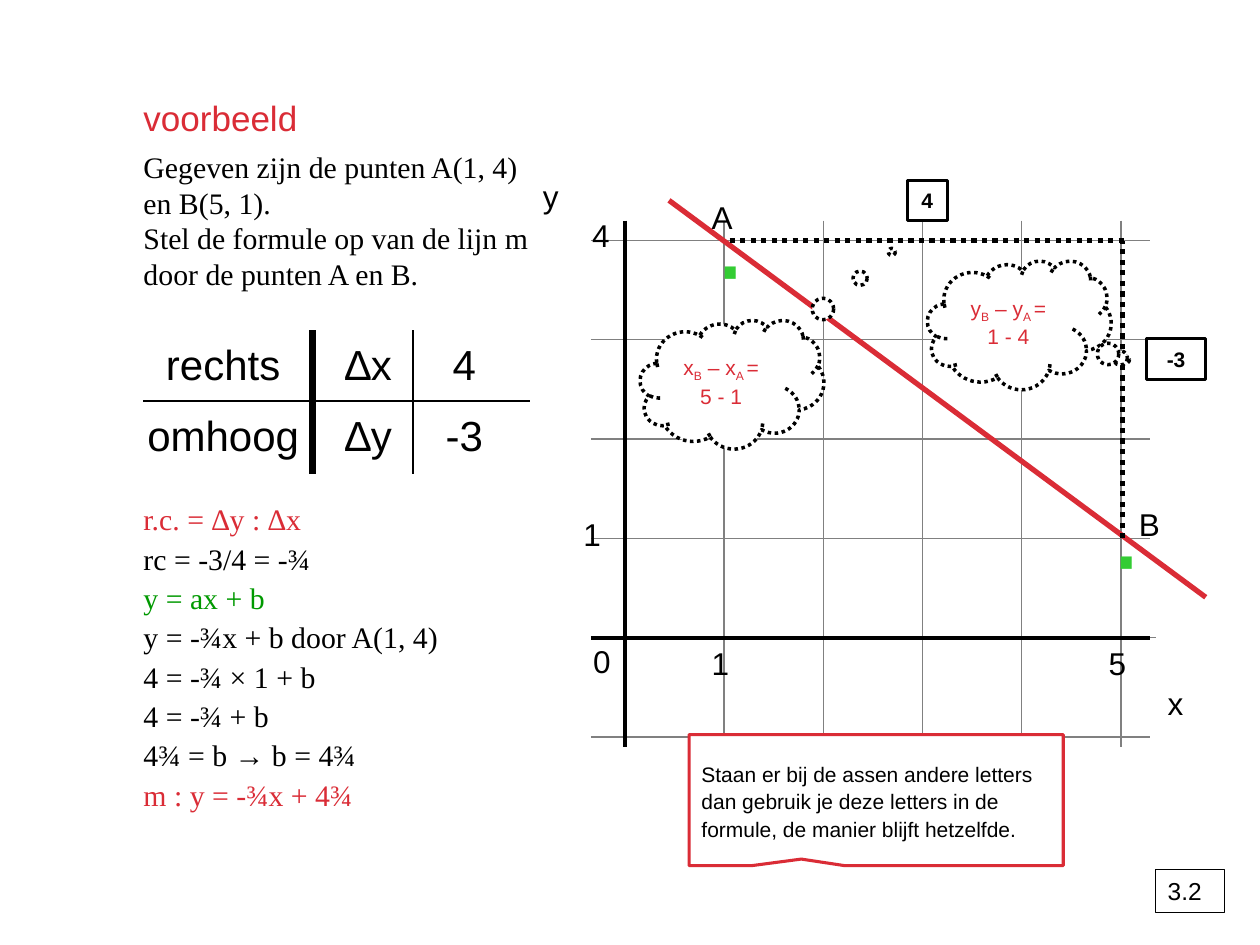
from lxml import etree
from pptx import Presentation
from pptx.dml.color import RGBColor
from pptx.enum.dml import MSO_LINE
from pptx.enum.shapes import MSO_CONNECTOR, MSO_SHAPE
from pptx.enum.text import MSO_ANCHOR, PP_ALIGN
from pptx.oxml.ns import qn
from pptx.util import Pt

BLACK = RGBColor(0x00, 0x00, 0x00)
WHITE = RGBColor(0xFF, 0xFF, 0xFF)
GREY = RGBColor(0x80, 0x80, 0x80)
RED = RGBColor(0xDA, 0x2C, 0x36)
GREEN = RGBColor(0x00, 0x99, 0x00)
LIME = RGBColor(0x33, 0xCC, 0x33)

SANS = "Arial"
SERIF = "Times New Roman"
STRAIGHT = MSO_CONNECTOR.STRAIGHT
DOTS = MSO_LINE.ROUND_DOT
RECT = MSO_SHAPE.RECTANGLE
CLOUD = MSO_SHAPE.CLOUD_CALLOUT
WEDGE = MSO_SHAPE.RECTANGULAR_CALLOUT
LEFT, CENTER = PP_ALIGN.LEFT, PP_ALIGN.CENTER
TOP, MIDDLE = MSO_ANCHOR.TOP, MSO_ANCHOR.MIDDLE

# Grid of the graph: origin and one unit
X0, Y0, UNIT = 357, 364.4, 56.73


def grid_x(value):
    return X0 + value * UNIT


def grid_y(value):
    return Y0 - value * UNIT


def style(part, size, color, font=SANS, bold=False):
    for run in part.runs:
        run.font.size = Pt(size)
        run.font.name = font
        run.font.bold = bold
        run.font.color.rgb = color


def set_frame(frame, anchor, inset=None):
    frame.word_wrap = True
    frame.vertical_anchor = anchor
    if inset is not None:
        frame.margin_left = frame.margin_right = Pt(inset)
        frame.margin_top = frame.margin_bottom = Pt(inset)


def add_text(slide, box, text, size, color=BLACK, font=SANS, align=LEFT,
             anchor=TOP, inset=None, spacing=1.0):
    frame = slide.shapes.add_textbox(*map(Pt, box)).text_frame
    set_frame(frame, anchor, inset)
    frame.text = text
    for part in frame.paragraphs:
        part.alignment = align
        part.line_spacing = spacing
        style(part, size, color, font)
    return frame


def add_line(slide, start, end, color, width, dash=None):
    line = slide.shapes.add_connector(STRAIGHT, *map(Pt, start + end))
    line.line.color.rgb = color
    line.line.width = Pt(width)
    if dash:
        line.line.dash_style = dash
    etree.SubElement(line._element.spPr, qn("a:effectLst"))


def add_box(slide, kind, box, color, width, fill=WHITE, dash=None, tip=()):
    shape = slide.shapes.add_shape(kind, *map(Pt, box))
    shape.shadow.inherit = False
    if fill is None:
        shape.fill.background()
    else:
        shape.fill.solid()
        shape.fill.fore_color.rgb = fill
    shape.line.color.rgb = color
    shape.line.width = Pt(width)
    if dash:
        shape.line.dash_style = dash
    for index, value in enumerate(tip):
        shape.adjustments[index] = value
    set_frame(shape.text_frame, MIDDLE)
    return shape.text_frame


def add_label(slide, box, text, size, width, bold, align, fill=WHITE):
    frame = add_box(slide, RECT, box, BLACK, width, fill)
    frame.text = text
    frame.paragraphs[0].alignment = align
    style(frame.paragraphs[0], size, BLACK, bold=bold)
    return frame


def add_cloud(slide, left, top, tip, name, values):
    frame = add_box(slide, CLOUD, (left, top, 105, 73.5), BLACK, 2,
                    dash=DOTS, tip=tip)
    frame.margin_right = Pt(12)
    frame.text = "\n" + values
    first, second = frame.paragraphs
    for text, low in ((name, False), ("B", True), (f" – {name}", False),
                      ("A ", True), ("=", False)):
        run = first.add_run()
        run.text = text
        if low:
            run.font._element.set("baseline", "-25000")
    for part in (first, second):
        part.alignment = CENTER
        style(part, 12, RED)


def draw_graph(slide):
    # Grid and axes
    left, right, top, bottom = 337.7, 657.4, 126, 427
    for step in range(1, 6):
        add_line(slide, (grid_x(step), top), (grid_x(step), bottom), GREY, 0.75)
    for step in (-1, 1, 2, 3, 4):
        add_line(slide, (left, grid_y(step)), (right, grid_y(step)), GREY, 0.75)
    add_line(slide, (left, Y0), (right + 3, Y0), GREY, 0.75)
    add_line(slide, (left, Y0), (right, Y0), BLACK, 2.25)
    add_line(slide, (X0, top), (X0, bottom), BLACK, 2.25)

    # Point marks, line m and its dotted steps
    for left, top in ((399.6, 104.4), (625.7, 270)):
        add_text(slide, (left, top, 28, 86.4), "·", 66, LIME)
    add_line(slide, (382.3, 114.5), (689, 341.3), RED, 3)
    add_line(slide, (416.9, grid_y(4)), (643.7, grid_y(4)), BLACK, 3, DOTS)
    add_line(slide, (641.5, grid_y(1)), (641.5, grid_y(4)), BLACK, 3, DOTS)

    # Names of axes, points and values
    for text, left, top in (("4", 331.2, 120.2), ("0", 331.9, 363.6),
                            ("1", 326.2, 290.9), ("1", 399.6, 364.3),
                            ("5", 626.4, 364.3), ("A", 399.6, 109.4),
                            ("B", 643.7, 285.1), ("x", 660.2, 387.4),
                            ("y", 303.1, 97.9)):
        add_text(slide, (left, top, 39.6, 28.8), text, 18)

    # Step sizes
    add_label(slide, (518.4, 103, 23, 23), "4", 12, 1.75, True, CENTER)
    add_label(slide, (655.2, 193.7, 33.8, 23), "-3", 12, 1.75, True, CENTER)
    add_cloud(slide, 530, 149, (0.58, 0.27), "y", "1 - 4")
    add_cloud(slide, 365.8, 182.9, (0.87, -1.03), "x", "5 - 1")


def draw_table(slide):
    columns = ((70.6, 113.8), (179.3, 62.6), (236.2, 58.3))
    rows = (("rechts", "∆x", "4"), ("omhoog", "∆y", "-3"))
    for row, words in enumerate(rows):
        for (left, width), word in zip(columns, words):
            box = (left, 190 + row * 40.3, width, 41)
            add_text(slide, box, word, 24, align=CENTER)
    add_line(slide, (82, 229), (303.1, 229), BLACK, 1)
    add_line(slide, (178.6, 188.6), (178.6, 270.7), BLACK, 4.5)
    add_line(slide, (236.2, 188.6), (236.2, 270.7), BLACK, 1)


def draw_text(slide):
    # Heading and task
    add_text(slide, (82, 43.2, 720, 45.4), "voorbeeld", 20, RED,
             anchor=MIDDLE, inset=0, spacing=1.1)
    task = ("Gegeven zijn de punten A(1, 4) en B(5, 1).\v"
            "Stel de formule op van de lijn m door de punten A en B.")
    add_text(slide, (82, 85, 227.5, 81.4), task, 17, font=SERIF, inset=0)

    # Worked solution
    steps = (("r.c. = ∆y : ∆x", RED), ("rc = -3/4 = -¾", BLACK),
             ("y = ax + b", GREEN), ("y = -¾x + b door A(1, 4)", BLACK),
             ("4 = -¾ × 1 + b", BLACK), ("4 = -¾ + b", BLACK),
             ("4¾ = b → b = 4¾", BLACK), ("m : y = -¾x + 4¾", RED))
    frame = add_text(slide, (82, 284.4, 342.7, 201.6),
                     "\n".join(text for text, _ in steps), 17,
                     font=SERIF, inset=0, spacing=1.1)
    for part, (_, color) in zip(frame.paragraphs, steps):
        style(part, 17, color, SERIF)


def draw_notes(slide):
    # Remark and section number
    frame = add_box(slide, WEDGE, (393.8, 419.8, 213.8, 74.9), RED, 1.75,
                    tip=(-0.2, 0.45))
    frame.text = ("Staan er bij de assen andere letters dan gebruik je deze "
                  "letters in de formule, de manier blijft hetzelfde.")
    part = frame.paragraphs[0]
    part.alignment = LEFT
    part.line_spacing = 1.1
    style(part, 12, BLACK)
    frame = add_label(slide, (660.2, 496.8, 39.6, 24.5), "3.2", 14, 0.75,
                      False, LEFT, None)
    frame.vertical_anchor = TOP


def main():
    deck = Presentation()
    deck.slide_width, deck.slide_height = Pt(720), Pt(540)
    slide = deck.slides.add_slide(deck.slide_layouts[6])
    draw_graph(slide)
    draw_table(slide)
    draw_text(slide)
    draw_notes(slide)
    deck.save("out.pptx")


if __name__ == "__main__":
    main()
